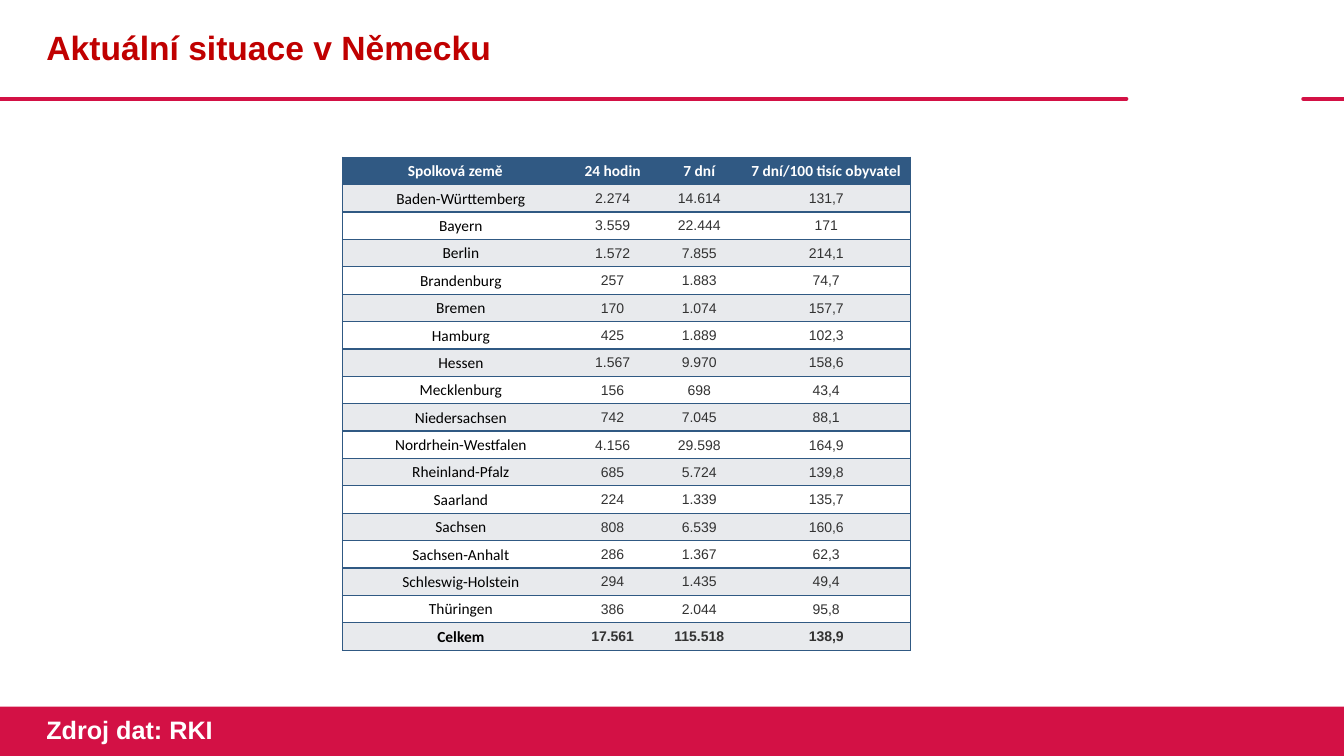
from lxml import etree
from pptx import Presentation
from pptx.dml.color import RGBColor
from pptx.enum.shapes import MSO_CONNECTOR, MSO_SHAPE
from pptx.enum.text import MSO_ANCHOR, MSO_AUTO_SIZE, PP_ALIGN
from pptx.oxml.ns import qn
from pptx.util import Pt

STRAIGHT = MSO_CONNECTOR.STRAIGHT
RECT = MSO_SHAPE.RECTANGLE
MIDDLE = MSO_ANCHOR.MIDDLE
GROW = MSO_AUTO_SIZE.SHAPE_TO_FIT_TEXT
LEFT, CENTER = PP_ALIGN.LEFT, PP_ALIGN.CENTER

COLORS = {
    "red": "D31145", "title": "C00000", "blue": "305983", "band": "E8EAED",
    "white": "FFFFFF", "black": "000000", "gray": "323232",
}
WIDTHS = [161.3, 63.4, 60.4, 121]
ROWS = [
    ("Spolková země", "24 hodin", "7 dní", "7 dní/100 tisíc obyvatel"),
    ("Baden-Württemberg", "2.274", "14.614", "131,7"),
    ("Bayern", "3.559", "22.444", "171"),
    ("Berlin", "1.572", "7.855", "214,1"),
    ("Brandenburg", "257", "1.883", "74,7"),
    ("Bremen", "170", "1.074", "157,7"),
    ("Hamburg", "425", "1.889", "102,3"),
    ("Hessen", "1.567", "9.970", "158,6"),
    ("Mecklenburg", "156", "698", "43,4"),
    ("Niedersachsen", "742", "7.045", "88,1"),
    ("Nordrhein-Westfalen", "4.156", "29.598", "164,9"),
    ("Rheinland-Pfalz", "685", "5.724", "139,8"),
    ("Saarland", "224", "1.339", "135,7"),
    ("Sachsen", "808", "6.539", "160,6"),
    ("Sachsen-Anhalt", "286", "1.367", "62,3"),
    ("Schleswig-Holstein", "294", "1.435", "49,4"),
    ("Thüringen", "386", "2.044", "95,8"),
    ("Celkem", "17.561", "115.518", "138,9"),
]


def color(name):
    return RGBColor.from_string(COLORS[name])


def write(para, text, tint, size, name="Arial", bold=True, align=LEFT):
    para.text = text
    para.alignment = align
    font = para.runs[0].font
    for key, value in {"size": Pt(size), "name": name, "bold": bold}.items():
        setattr(font, key, value)
    font.color.rgb = color(tint)


def add_rule(slide, start, end, y):
    rule = slide.shapes.add_connector(STRAIGHT, Pt(start), Pt(y), Pt(end), Pt(y))
    rule.line.color.rgb = color("red")
    rule.line.width = Pt(3)
    rule.line._get_or_add_ln().set("cap", "rnd")
    etree.SubElement(rule._element.spPr, qn("a:effectLst"))


def add_head(slide, x, y, w, h):
    title = slide.shapes.title
    place = {"left": Pt(x + 26), "top": Pt(y), "width": Pt(778.5), "height": Pt(h)}
    for key, value in place.items():
        setattr(title, key, value)
    title.text_frame.vertical_anchor = MIDDLE
    para = title.text_frame.paragraphs[0]
    write(para, "Aktuální situace v Německu", "title", 24)
    para.line_spacing = 0.9
    add_rule(slide, x, x + 804.5, y + h)
    add_rule(slide, x + 931, x + w, y + h)


def add_foot(slide, x, y, w, h):
    bar = slide.shapes.add_shape(RECT, Pt(x), Pt(y), Pt(w), Pt(h))
    bar.shadow.inherit = False
    bar.fill.solid()
    bar.fill.fore_color.rgb = color("red")
    bar.line.fill.background()
    label = slide.shapes.add_textbox(Pt(x + 26), Pt(y + 2.3), Pt(135), Pt(29))
    frame = label.text_frame
    frame.word_wrap = False
    frame.auto_size = GROW
    write(frame.paragraphs[0], "Zdroj dat: RKI", "white", 18)


def add_edges(cell, col):
    shown = {"L": col == 0, "R": col == len(WIDTHS) - 1, "T": True, "B": True}
    props = cell._tc.get_or_add_tcPr()
    for spot, (side, on) in enumerate(shown.items()):
        edge = etree.Element(qn("a:ln" + side), w=str(Pt(1)))
        if on:
            fill = etree.SubElement(edge, qn("a:solidFill"))
            etree.SubElement(fill, qn("a:srgbClr"), val=COLORS["blue"])
        else:
            etree.SubElement(edge, qn("a:noFill"))
        props.insert(spot, edge)


def fill_cell(cell, text, row, col):
    head = row == 0
    inset = 8.6 if col == 0 and not head else 0.7
    margins = {"left": inset, "top": 0.7, "right": 0.7, "bottom": 0}
    for side, gap in margins.items():
        setattr(cell, "margin_" + side, Pt(gap))
    cell.vertical_anchor = MIDDLE
    cell.fill.solid()
    cell.fill.fore_color.rgb = color("blue" if head else "band" if row % 2 else "white")
    if head or col == 0:
        tint, size, name = "white" if head else "black", 11, "Calibri"
    else:
        tint, size, name = "gray", 10, "Arial"
    bold = row in (0, len(ROWS) - 1)
    write(cell.text_frame.paragraphs[0], text, tint, size, name, bold, CENTER)
    add_edges(cell, col)


def add_grid(slide, x, y, w, h):
    frame = slide.shapes.add_table(len(ROWS), len(WIDTHS), Pt(x), Pt(y), Pt(w), Pt(h))
    table = frame.table
    for col, width in enumerate(WIDTHS):
        table.columns[col].width = Pt(width)
    for row, texts in enumerate(ROWS):
        table.rows[row].height = Pt(h / len(ROWS))
        for col, text in enumerate(texts):
            fill_cell(table.cell(row, col), text, row, col)


def main():
    deck = Presentation()
    deck.slide_width, deck.slide_height = Pt(960), Pt(540)
    slide = deck.slides.add_slide(deck.slide_layouts[5])
    add_head(slide, 0, 0, 960, 70.6)
    add_foot(slide, 0, 504.7, 960, 35.3)
    add_grid(slide, 244.6, 112.3, sum(WIDTHS), 352.4)
    deck.save("out.pptx")


if __name__ == "__main__":
    main()
